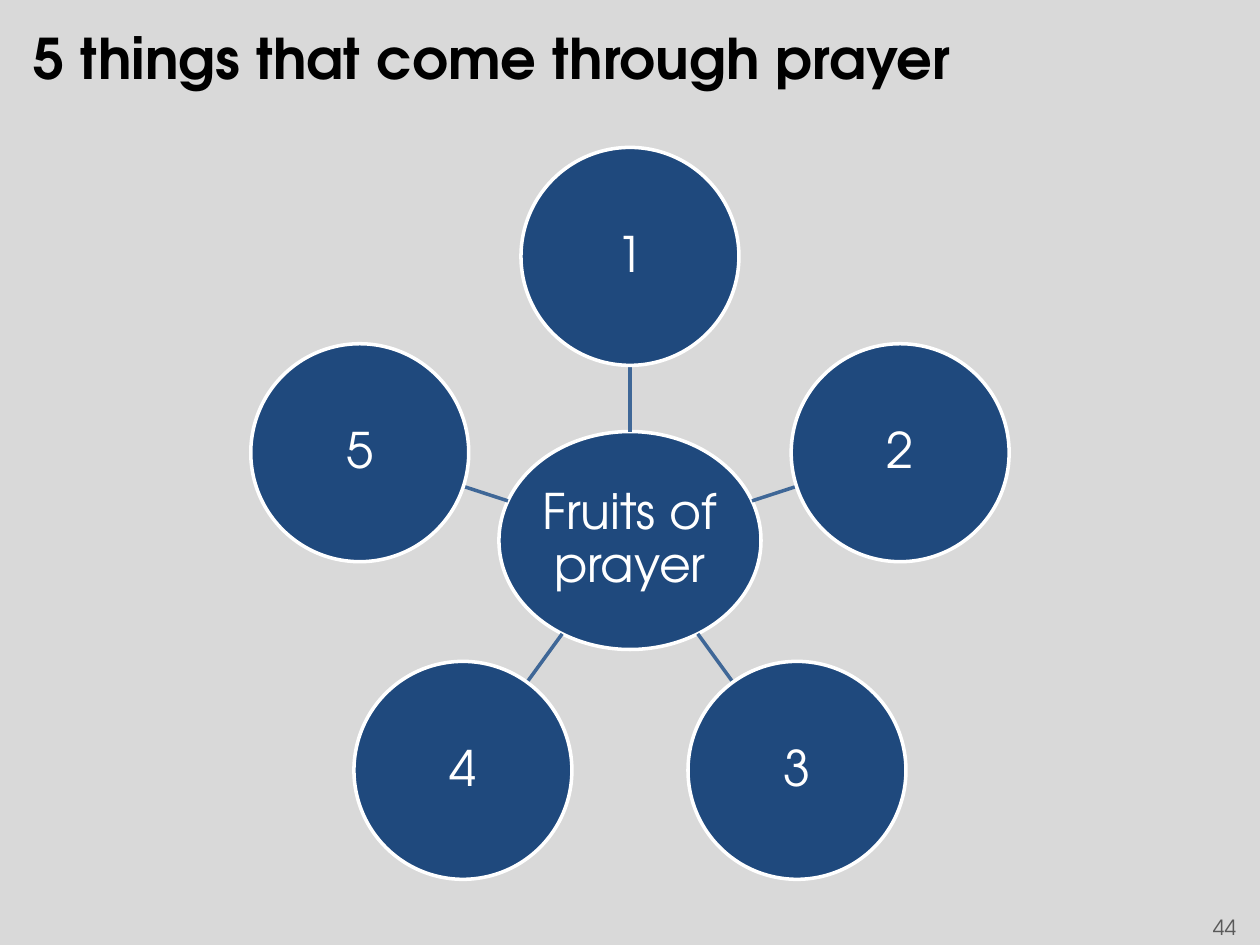
from math import cos, hypot, pi, sin

from lxml import etree
from pptx import Presentation
from pptx.dml.color import RGBColor
from pptx.enum.shapes import MSO_CONNECTOR, MSO_SHAPE
from pptx.enum.text import MSO_ANCHOR, PP_ALIGN
from pptx.oxml.ns import qn
from pptx.util import Inches, Pt

# Content
TITLE = "5 things that come through prayer"
HUB = "Fruits of prayer"
FRUITS = ["1", "2", "3", "4", "5"]
PAGE = "44"

# Style
FONT = "TeX Gyre Adventor"
GREY = RGBColor(0xD9, 0xD9, 0xD9)
NAVY = RGBColor(0x1F, 0x49, 0x7D)
BLUE = RGBColor(0x3F, 0x67, 0x97)
WHITE = RGBColor(0xFF, 0xFF, 0xFF)
BLACK = RGBColor(0, 0, 0)
DIM = RGBColor(0x59, 0x59, 0x59)
OVAL, STRAIGHT = MSO_SHAPE.OVAL, MSO_CONNECTOR.STRAIGHT
TOP, MIDDLE = MSO_ANCHOR.TOP, MSO_ANCHOR.MIDDLE
LEFT, CENTER, RIGHT = PP_ALIGN.LEFT, PP_ALIGN.CENTER, PP_ALIGN.RIGHT

# Layout in inches
MID_X, MID_Y = 5, 4.29
REACH = 2.255
SIZE = 1.73
HUB_W = 2.08


def write(shape, text, size, color, align, anchor, bold=False):
    frame = shape.text_frame
    frame.word_wrap = True
    frame.vertical_anchor = anchor
    par = frame.paragraphs[0]
    par.text = text
    par.alignment = align
    font = par.font
    font.name, font.size, font.bold = FONT, Pt(size), bold
    font.color.rgb = color
    return frame, par


def add_label(box, *style):
    write(slide.shapes.add_textbox(*map(Inches, box)), *style)


def add_oval(x, y, width, text):
    oval = slide.shapes.add_shape(
        OVAL, Inches(x - width / 2), Inches(y - SIZE / 2),
        Inches(width), Inches(SIZE))
    oval.shadow.inherit = False
    oval.fill.solid()
    oval.fill.fore_color.rgb = NAVY
    oval.line.color.rgb = WHITE
    oval.line.width = Pt(2)
    frame, par = write(oval, text, 28, WHITE, CENTER, MIDDLE)
    frame.margin_left = frame.margin_right = Inches(0.02)
    frame.margin_top = frame.margin_bottom = Inches(0.02)
    par.line_spacing = 0.9


def add_spoke(dx, dy):
    # From the rim of the hub to the rim of the outer circle
    near = 1 / hypot(dx / (HUB_W / 2), dy / (SIZE / 2))
    far = REACH - SIZE / 2
    ends = [Inches(v) for r in (near, far)
            for v in (MID_X + r * dx, MID_Y + r * dy)]
    spoke = slide.shapes.add_connector(STRAIGHT, *ends)
    spoke.line.color.rgb = BLUE
    spoke.line.width = Pt(2)
    etree.SubElement(spoke._element.spPr, qn("a:effectLst"))


prs = Presentation()
prs.slide_width, prs.slide_height = Inches(10), Inches(7.5)
slide = prs.slides.add_slide(prs.slide_layouts[6])
slide.background.fill.solid()
slide.background.fill.fore_color.rgb = GREY

# Title
add_label((0.17, 0.14, 9.33, 0.55), TITLE, 32, BLACK, LEFT, TOP, True)

# Hub with its ring of circles, clockwise from the top
add_oval(MID_X, MID_Y, HUB_W, HUB)
for i, fruit in enumerate(FRUITS):
    angle = 2 * pi * i / len(FRUITS)
    dx, dy = sin(angle), -cos(angle)
    add_spoke(dx, dy)
    add_oval(MID_X + REACH * dx, MID_Y + REACH * dy, SIZE, fruit)

# Page number
add_label((7.58, 7.16, 2.33, 0.4), PAGE, 12, DIM, RIGHT, MIDDLE)

prs.save("out.pptx")
